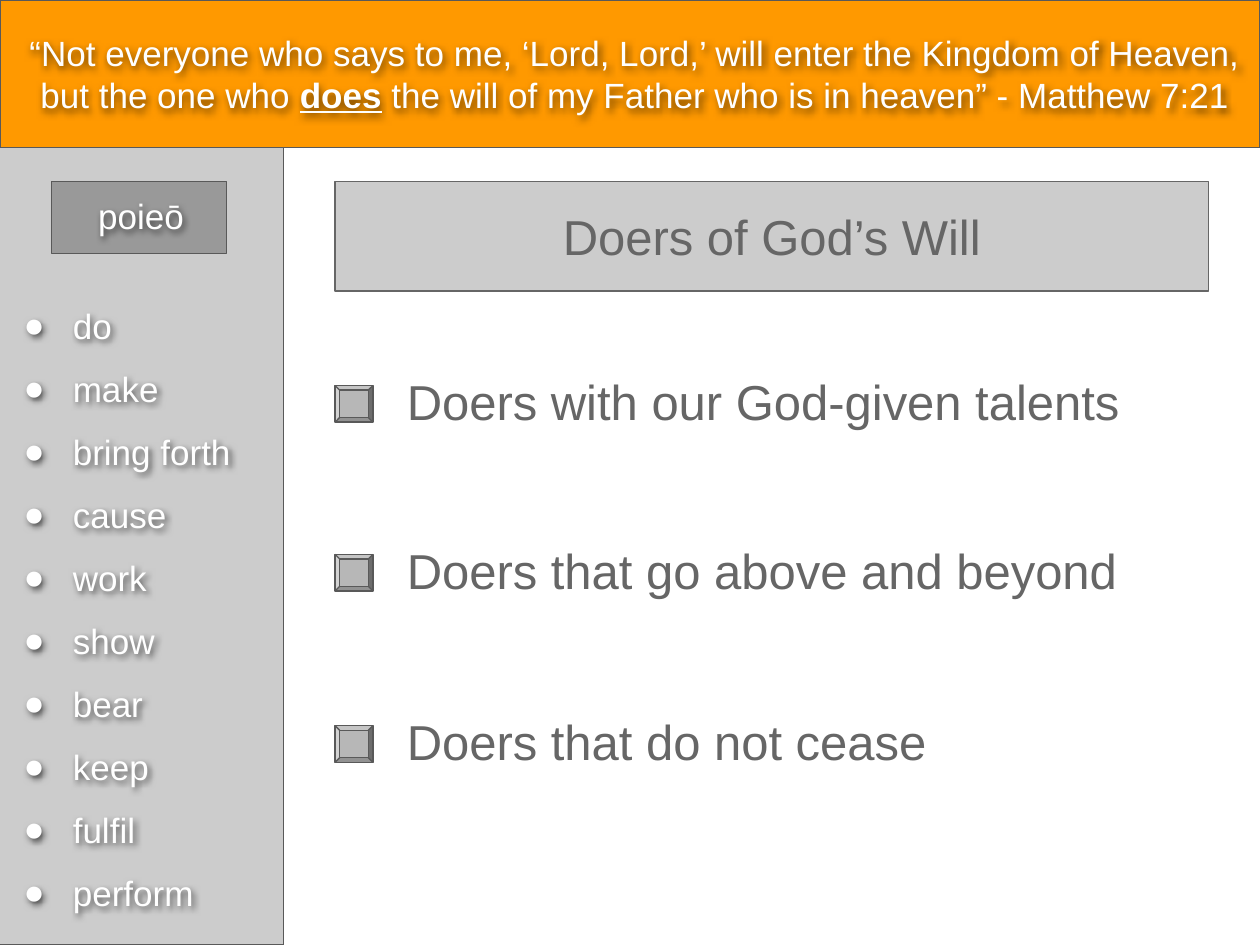
"""Build the slide about doers of God's will."""
import pptx
import pptx.dml.color
import pptx.enum.shapes
import pptx.enum.text
import pptx.oxml
import pptx.oxml.ns
import pptx.util

Inches = pptx.util.Inches
Points = pptx.util.Pt
Preset = pptx.enum.shapes.MSO_SHAPE
Align = pptx.enum.text.PP_ALIGN
Anchor = pptx.enum.text.MSO_ANCHOR

COLORS = {
    "banner": "FF9900",
    "panel": "CCCCCC",
    "tag": "999999",
    "marker": "B7B7B7",
    "outline": "595959",
    "dark": "666666",
    "light": "FFFFFF",
}
QUOTE = [
    ("“Not everyone who says to me, ‘Lord, Lord,’ will enter the Kingdom of Heaven, but the one who ", False),
    ("does", True),
    (" the will of my Father who is in heaven” - Matthew 7:21", False),
]
MEANINGS = ["do", "make", "bring forth", "cause", "work", "show", "bear", "keep", "fulfil", "perform"]
POINTS = [
    ("Doers with our God-given talents", 2.85),
    ("Doers that go above and beyond", 4.19),
    ("Doers that do not cease", 5.55),
]


class SlideBuilder:
    def __init__(self, presentation):
        self.slide = presentation.slides.add_slide(presentation.slide_layouts[5])
        self.font = "Arial"

    def color(self, name):
        return pptx.dml.color.RGBColor.from_string(COLORS[name])

    def paint(self, shape, fill, line):
        shape.fill.solid()
        shape.fill.fore_color.rgb = self.color(fill)
        shape.line.color.rgb = self.color(line)
        shape.line.width = Points(0.75)

    def box(self, preset, left, top, width, height, fill):
        shape = self.slide.shapes.add_shape(
            preset, Inches(left), Inches(top), Inches(width), Inches(height))
        shape.shadow.inherit = False
        self.paint(shape, fill, "outline")
        return shape

    def frame(self, shape, top=0.1, bottom=0.1):
        frame = shape.text_frame
        frame.word_wrap = True
        frame.auto_size = pptx.enum.text.MSO_AUTO_SIZE.NONE
        frame.vertical_anchor = Anchor.TOP
        frame.margin_left = frame.margin_right = Inches(0.1)
        frame.margin_top, frame.margin_bottom = Inches(top), Inches(bottom)
        return frame

    def add_runs(self, paragraph, runs, size, color, align=Align.LEFT):
        paragraph.alignment = align
        for text, emphasis in runs:
            run = paragraph.add_run()
            run.text = text
            run.font.name = self.font
            run.font.size = Points(size)
            run.font.color.rgb = self.color(color)
            run.font.bold = run.font.underline = emphasis

    def text(self, left, top, width, height, runs, size, color, align=Align.LEFT):
        shape = self.slide.shapes.add_textbox(
            Inches(left), Inches(top), Inches(width), Inches(height))
        self.add_runs(self.frame(shape).paragraphs[0], runs, size, color, align)
        return shape

    def title(self, left, top, width, height, text):
        shape = self.slide.shapes.title
        shape.left, shape.top = Inches(left), Inches(top)
        shape.width, shape.height = Inches(width), Inches(height)
        self.paint(shape, "panel", "dark")
        paragraph = self.frame(shape, top=0.2).paragraphs[0]
        self.add_runs(paragraph, [(text, False)], 28, "dark", Align.CENTER)

    def bullets(self, left, top, width, height, items):
        shape = self.slide.shapes.add_textbox(
            Inches(left), Inches(top), Inches(width), Inches(height))
        frame = self.frame(shape, bottom=0.2)
        for index, item in enumerate(items):
            paragraph = frame.add_paragraph() if index else frame.paragraphs[0]
            paragraph.line_spacing = 1.5
            properties = paragraph._p.get_or_add_pPr()
            properties.set("marL", str(Inches(0.5)))
            properties.set("indent", str(Inches(-0.39)))
            namespace = pptx.oxml.ns.nsdecls("a")
            for element in (
                f'<a:buClr {namespace}><a:srgbClr val="{COLORS["light"]}"/></a:buClr>',
                f'<a:buFont {namespace} typeface="{self.font}"/>',
                f'<a:buChar {namespace} char="●"/>',
            ):
                properties.append(pptx.oxml.parse_xml(element))
            self.add_runs(paragraph, [(item, False)], 20, "light")
        return shape

    def cast_shadow(self, shape):
        shape._element.spPr.append(pptx.oxml.parse_xml(
            f'<a:effectLst {pptx.oxml.ns.nsdecls("a")}>'
            f'<a:outerShdw blurRad="{Points(4)}" dist="{Points(2)}" dir="3600000" algn="bl" rotWithShape="0">'
            '<a:srgbClr val="000000"><a:alpha val="60000"/></a:srgbClr>'
            '</a:outerShdw></a:effectLst>'))


def main():
    presentation = pptx.Presentation()
    presentation.slide_width, presentation.slide_height = Inches(10), Inches(7.5)
    builder = SlideBuilder(presentation)

    builder.box(Preset.FLOWCHART_PROCESS, 0, 0, 10, 1.17, "banner")
    builder.box(Preset.RECTANGLE, -0.02, 1.17, 2.27, 6.33, "panel")
    quote = builder.text(0.04, 0.15, 10, 1.03, QUOTE, 20, "light", Align.CENTER)
    builder.box(Preset.RECTANGLE, 0.41, 1.44, 1.39, 0.57, "tag")
    word = builder.text(0.63, 1.44, 0.98, 0.57, [("poieō", False)], 20, "light", Align.CENTER)
    meanings = builder.bullets(-0.02, 2.15, 2.27, 5.35, MEANINGS)
    for shape in (quote, word, meanings):
        builder.cast_shadow(shape)

    builder.title(2.66, 1.44, 6.93, 0.87, "Doers of God’s Will")
    for text, top in POINTS:
        builder.box(Preset.BEVEL, 2.66, top + 0.21, 0.3, 0.29, "marker")
        builder.text(3.13, top, 6.58, 0.87, [(text, False)], 28, "dark")

    presentation.save("out.pptx")


if __name__ == "__main__":
    main()
